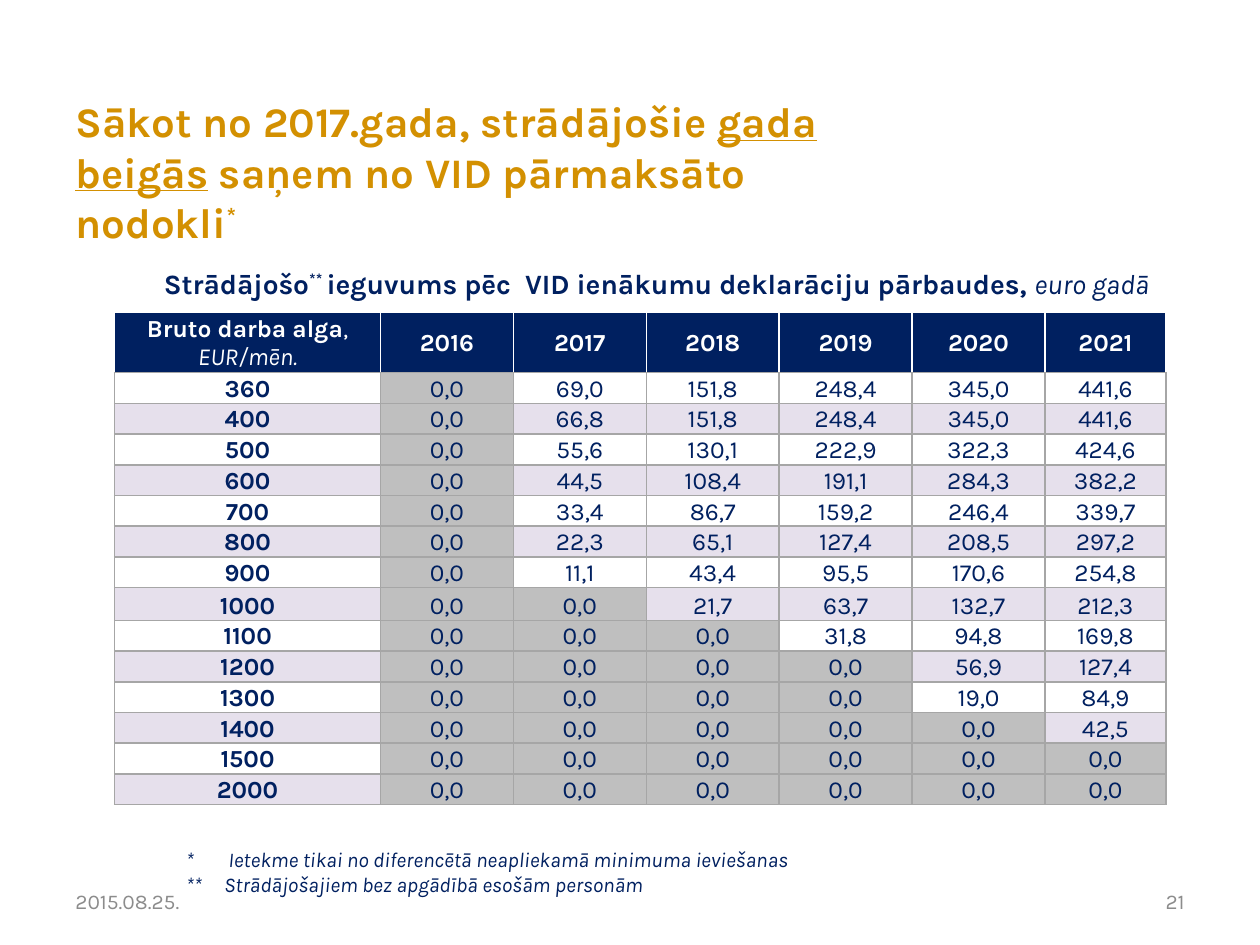
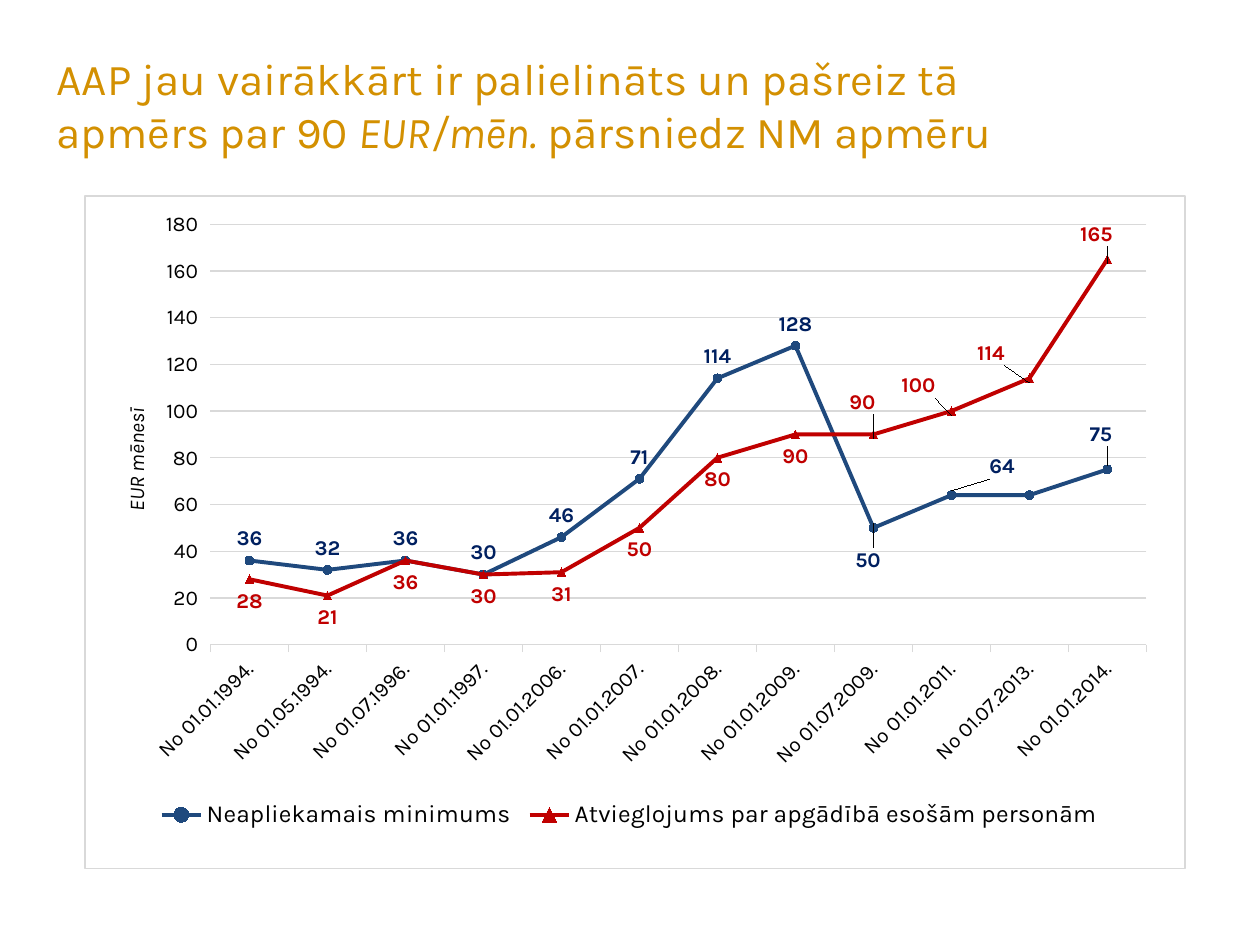
from lxml import etree
from pptx import Presentation
from pptx.chart.data import CategoryChartData
from pptx.dml.color import RGBColor
from pptx.enum.chart import (XL_CHART_TYPE, XL_LABEL_POSITION, XL_LEGEND_POSITION,
                             XL_MARKER_STYLE, XL_TICK_MARK)
from pptx.enum.text import MSO_ANCHOR, PP_ALIGN
from pptx.oxml import parse_xml
from pptx.oxml.ns import nsdecls, qn
from pptx.util import Inches, Pt

WIDTH, HEIGHT = Inches(10), Inches(7.5)
FONT = "Karla"
GOLD = RGBColor(0xD3, 0x90, 0x01)
NAVY = RGBColor(0x00, 0x20, 0x60)
BLUE = RGBColor(0x1F, 0x49, 0x7D)
RED = RGBColor(0xC0, 0x00, 0x00)
BLACK = RGBColor(0x00, 0x00, 0x00)
WHITE = RGBColor(0xFF, 0xFF, 0xFF)
LILAC = RGBColor(0xE6, 0xE0, 0xEC)
SILVER = RGBColor(0xBF, 0xBF, 0xBF)
BORDER_GREY = RGBColor(0xA6, 0xA6, 0xA6)
GRID_GREY = RGBColor(0xD9, 0xD9, 0xD9)
FOOTER_GREY = RGBColor(0x8C, 0x8C, 0x8C)
LEFT, CENTER, RIGHT = PP_ALIGN.LEFT, PP_ALIGN.CENTER, PP_ALIGN.RIGHT
MIDDLE, BOTTOM = MSO_ANCHOR.MIDDLE, MSO_ANCHOR.BOTTOM
ABOVE, BELOW = XL_LABEL_POSITION.ABOVE, XL_LABEL_POSITION.BELOW
CIRCLE, TRIANGLE = XL_MARKER_STYLE.CIRCLE, XL_MARKER_STYLE.TRIANGLE
TICK_OUTSIDE, LEGEND_BOTTOM = XL_TICK_MARK.OUTSIDE, XL_LEGEND_POSITION.BOTTOM
LINE_MARKERS = XL_CHART_TYPE.LINE_MARKERS

YEARS = ["2016", "2017", "2018", "2019", "2020", "2021"]
GAINS = {
    "360": "0,0 69,0 151,8 248,4 345,0 441,6",
    "400": "0,0 66,8 151,8 248,4 345,0 441,6",
    "500": "0,0 55,6 130,1 222,9 322,3 424,6",
    "600": "0,0 44,5 108,4 191,1 284,3 382,2",
    "700": "0,0 33,4 86,7 159,2 246,4 339,7",
    "800": "0,0 22,3 65,1 127,4 208,5 297,2",
    "900": "0,0 11,1 43,4 95,5 170,6 254,8",
    "1000": "0,0 0,0 21,7 63,7 132,7 212,3",
    "1100": "0,0 0,0 0,0 31,8 94,8 169,8",
    "1200": "0,0 0,0 0,0 0,0 56,9 127,4",
    "1300": "0,0 0,0 0,0 0,0 19,0 84,9",
    "1400": "0,0 0,0 0,0 0,0 0,0 42,5",
    "1500": "0,0 0,0 0,0 0,0 0,0 0,0",
    "2000": "0,0 0,0 0,0 0,0 0,0 0,0",
}
DATES = ["01.01.1994.", "01.05.1994.", "01.07.1996.", "01.01.1997.", "01.01.2006.",
         "01.01.2007.", "01.01.2008.", "01.01.2009.", "01.07.2009.", "01.01.2011.",
         "01.07.2013.", "01.01.2014."]
MINIMUM = [36, 32, 36, 30, 46, 71, 114, 128, 50, 64, 64, 75]
RELIEF = [28, 21, 36, 30, 31, 50, 80, 90, 90, 100, 114, 165]
MINIMUM_SHIFTS = {8: (-0.005, 0.08), 9: (0.046, -0.01), 10: None, 11: (-0.006, -0.02)}
RELIEF_SHIFTS = {8: (-0.01, -0.08), 9: (-0.03, -0.07), 10: (-0.035, -0.07),
                 11: (-0.01, -0.07)}


def across(percent):
    """Return a share of the slide's width."""
    return round(WIDTH * percent / 100)


def down(percent):
    """Return a share of the slide's height."""
    return round(HEIGHT * percent / 100)


def place(left, top, width, height):
    """Return a frame given in percent of the slide."""
    return across(left), down(top), across(width), down(height)


def style_font(font, size, color, bold=False, italic=False):
    """Give a font the shared typeface and its own look."""
    font.name, font.size = FONT, Pt(size)
    font.color.rgb = color
    font.bold, font.italic = bold, italic


def write_spans(para, spans, size, color, align=LEFT):
    """Write (text, marks) spans: b bold, i italic, u underlined, ^ raised."""
    para.alignment = align
    for text, marks in spans:
        span = para.add_run()
        span.text = text
        style_font(span.font, size, color, "b" in marks, "i" in marks)
        if "u" in marks:
            span.font.underline = True
        if "^" in marks:
            span.font._element.set("baseline", "30000")


def add_text(page, frame, paragraphs, size, color, align=LEFT, tab=None):
    """Add a wrapped, middle-anchored text box."""
    box = page.shapes.add_textbox(*frame)
    text_frame = box.text_frame
    text_frame.word_wrap = True
    text_frame.vertical_anchor = MIDDLE
    for index, spans in enumerate(paragraphs):
        para = text_frame.add_paragraph() if index else text_frame.paragraphs[0]
        if tab:
            stops = etree.SubElement(para._p.get_or_add_pPr(), qn("a:tabLst"))
            etree.SubElement(stops, qn("a:tab"), pos=str(tab), algn="l")
        write_spans(para, spans, size, color, align)
    return box


def add_title(page, frame, spans, size):
    """Add a gold title on white."""
    box = add_text(page, frame, [spans], size, GOLD)
    box.fill.solid()
    box.fill.fore_color.rgb = WHITE


def add_footer(page, date, number):
    """Add the date and the slide number."""
    for left, text, align in ((5, date, LEFT), (71.7, number, RIGHT)):
        add_text(page, place(left, 92.67, 23.3, 5.33), [[(text, "")]], 12, FOOTER_GREY, align)


def set_borders(cell, colors):
    """Draw 1 pt left, right, top and bottom borders."""
    properties = cell._tc.get_or_add_tcPr()
    for index, (side, color) in enumerate(zip("LRTB", colors)):
        properties.insert(index, parse_xml(
            f'<a:ln{side} {nsdecls("a")} w="12700"><a:solidFill>'
            f'<a:srgbClr val="{color}"/></a:solidFill></a:ln{side}>'))


def fill_cell(cell, spans, fill, color, anchor, borders):
    """Write and colour one table cell."""
    cell.margin_left = cell.margin_right = cell.margin_top = Inches(0.01)
    cell.margin_bottom = 0
    cell.vertical_anchor = anchor
    cell.fill.solid()
    cell.fill.fore_color.rgb = fill
    set_borders(cell, borders)
    write_spans(cell.text_frame.paragraphs[0], spans, 14, color, CENTER)


def add_gains_table(page):
    """Add the table of gains by salary and year."""
    frame = place(9.1, 33.07, 83.5, 51.73)
    table = page.shapes.add_table(len(GAINS) + 1, len(YEARS) + 1, *frame).table
    for column, width in zip(table.columns, [21.1] + [10.55] * 5 + [9.6]):
        column.width = across(width)
    header = [[("Bruto darba alga", "b"), (", ", ""), ("EUR/mēn.", "i")]]
    header += [[(year, "b")] for year in YEARS]
    table.rows[0].height = down(6.27)
    for cell, spans in zip(table.rows[0].cells, header):
        fill_cell(cell, spans, NAVY, WHITE, MIDDLE, [WHITE] * 3 + [BORDER_GREY])
    for number, (salary, gains) in enumerate(GAINS.items(), 1):
        row = table.rows[number]
        row.height = down(3.47 if salary == "1000" else 2.67)
        band = WHITE if number % 2 else LILAC
        for column, text in enumerate([salary] + gains.split()):
            fill = SILVER if text == "0,0" else band
            fill_cell(row.cells[column], [(text, "" if column else "b")], fill, NAVY,
                      BOTTOM, [BORDER_GREY] * 4)


def make_layout(left, top, width=None, height=None, inner=False, edge=True):
    """Return a manual chart layout in shares of the chart."""
    parts = '<c:layoutTarget val="inner"/>' if inner else ""
    if edge:
        parts += '<c:xMode val="edge"/><c:yMode val="edge"/>'
    for name, value in zip("xywh", (left, top, width, height)):
        if value is not None:
            parts += f'<c:{name} val="{value}"/>'
    return parse_xml(f'<c:layout {nsdecls("c")}><c:manualLayout>{parts}'
                     '</c:manualLayout></c:layout>')


def set_layout(element, layout, after=None):
    """Replace an element's layout, after a named child or at the start."""
    for old in element.findall(qn("c:layout")):
        element.remove(old)
    if after:
        element.find(qn(after)).addnext(layout)
    else:
        element.insert(0, layout)


def style_series(series, color, marker, label_color, position, shifts):
    """Style a line, its markers and its labels, moving some labels."""
    series.smooth = False
    series.format.line.color.rgb = color
    series.format.line.width = Pt(2.25)
    series.marker.style, series.marker.size = marker, 5
    series.marker.format.fill.solid()
    series.marker.format.fill.fore_color.rgb = color
    series.marker.format.line.color.rgb = color
    labels = series.data_labels
    labels.show_value = True
    labels.number_format, labels.number_format_is_linked = "0", False
    labels.position = position
    style_font(labels.font, 12, label_color, bold=True)
    for index, shift in shifts.items():
        label = series.points[index].data_label
        label.position = position
        style_font(label.font, 12, label_color, bold=True)
        element = labels._element.xpath(f"c:dLbl[c:idx/@val='{index}']")[0]
        if shift:
            set_layout(element, make_layout(*shift, edge=False), "c:idx")
        else:
            for child in list(element)[1:]:
                element.remove(child)
            etree.SubElement(element, qn("c:delete"), val="1")


def style_axes(chart):
    """Style both axes and the value axis title."""
    dates, values = chart.category_axis, chart.value_axis
    dates.major_tick_mark = TICK_OUTSIDE
    dates.format.line.color.rgb = GRID_GREY
    dates.format.line.width = Pt(0.75)
    style_font(dates.tick_labels.font, 12, BLACK)
    dates._element.find(qn("c:txPr")).find(qn("a:bodyPr")).set("rot", "-2700000")
    values.minimum_scale, values.maximum_scale, values.major_unit = 0, 180, 20
    values.major_tick_mark = TICK_OUTSIDE
    values.format.line.fill.background()
    values.major_gridlines.format.line.color.rgb = GRID_GREY
    values.major_gridlines.format.line.width = Pt(0.75)
    values.tick_labels.number_format = "0"
    values.tick_labels.number_format_is_linked = False
    style_font(values.tick_labels.font, 12, BLACK)
    title = values.axis_title
    title.text_frame.text = "EUR mēnesī"
    style_font(title.text_frame.paragraphs[0].runs[0].font, 12, BLACK, italic=True)
    body = title.text_frame._txBody.find(qn("a:bodyPr"))
    body.set("rot", "-5400000")
    body.set("vert", "horz")
    set_layout(title._element, make_layout(0.03, 0.31), "c:tx")


def add_history_chart(page):
    """Add the line chart of the minimum and the relief."""
    data = CategoryChartData(number_format="0")
    data.categories = [f"No {date}" for date in DATES]
    data.add_series("Neapliekamais minimums", MINIMUM)
    data.add_series("Atvieglojums par apgādībā esošām personām", RELIEF)
    frame = place(6.7, 20.67, 87.4, 71.33)
    chart = page.shapes.add_chart(LINE_MARKERS, *frame, data).chart
    chart.has_title = False
    style_font(chart.font, 12, BLACK)
    minimum, relief = chart.plots[0].series
    style_series(minimum, BLUE, CIRCLE, NAVY, ABOVE, MINIMUM_SHIFTS)
    style_series(relief, RED, TRIANGLE, RED, BELOW, RELIEF_SHIFTS)
    style_axes(chart)
    chart.has_legend = True
    legend = chart.legend
    legend.position, legend.include_in_layout = LEGEND_BOTTOM, False
    style_font(legend.font, 14, BLACK)
    set_layout(legend._element, make_layout(0.06, 0.885, 0.87, 0.07), "c:legendPos")
    space = chart._chartSpace
    plot_area = space.chart.plotArea
    set_layout(plot_area, make_layout(0.114, 0.042, 0.851, 0.625, inner=True))
    space.chart.addnext(parse_xml(
        f'<c:spPr {nsdecls("c", "a")}><a:solidFill><a:srgbClr val="{WHITE}"/></a:solidFill>'
        f'<a:ln w="9525"><a:solidFill><a:srgbClr val="{GRID_GREY}"/></a:solidFill></a:ln>'
        '</c:spPr>'))


def build_gains_page(page):
    """Build the slide on refunds after the yearly declaration."""
    add_footer(page, "2015.08.25.", "21")
    add_title(page, place(5, 9.73, 63.3, 16.8), [
        ("Sākot no 2017.gada, strādājošie ", "b"), ("gada beigās", "bu"),
        (" saņem no VID pārmaksāto nodokli", "b"), ("*", "b^")], 24)
    add_text(page, place(13.8, 89.07, 66.6, 6.27), [
        [("*\t Ietekme tikai no diferencētā neapliekamā minimuma ieviešanas", "i")],
        [("**\tStrādājošajiem bez apgādībā esošām personām", "i")]],
        12, NAVY, tab=Inches(0.3))
    add_gains_table(page)
    add_text(page, place(9.2, 26.8, 85.8, 6.27), [[
        ("Strādājošo", "b"), ("** ", "b^"),
        ("ieguvums pēc  VID ienākumu deklarāciju pārbaudes, ", "b"),
        ("euro gadā", "i")]], 16, NAVY, CENTER)


def build_history_page(page):
    """Build the slide on the growth of the relief."""
    add_title(page, place(3.5, 4.8, 76.4, 12.53), [
        ("AAP jau vairākkārt ir palielināts un pašreiz tā apmērs par 90 ", ""),
        ("EUR/mēn.", "i"), (" pārsniedz NM apmēru", "")], 25.2)
    add_history_chart(page)


def main():
    """Build and save the deck."""
    deck = Presentation()
    deck.slide_width, deck.slide_height = WIDTH, HEIGHT
    for build in (build_gains_page, build_history_page):
        build(deck.slides.add_slide(deck.slide_layouts[6]))
    deck.save("out.pptx")


if __name__ == "__main__":
    main()
